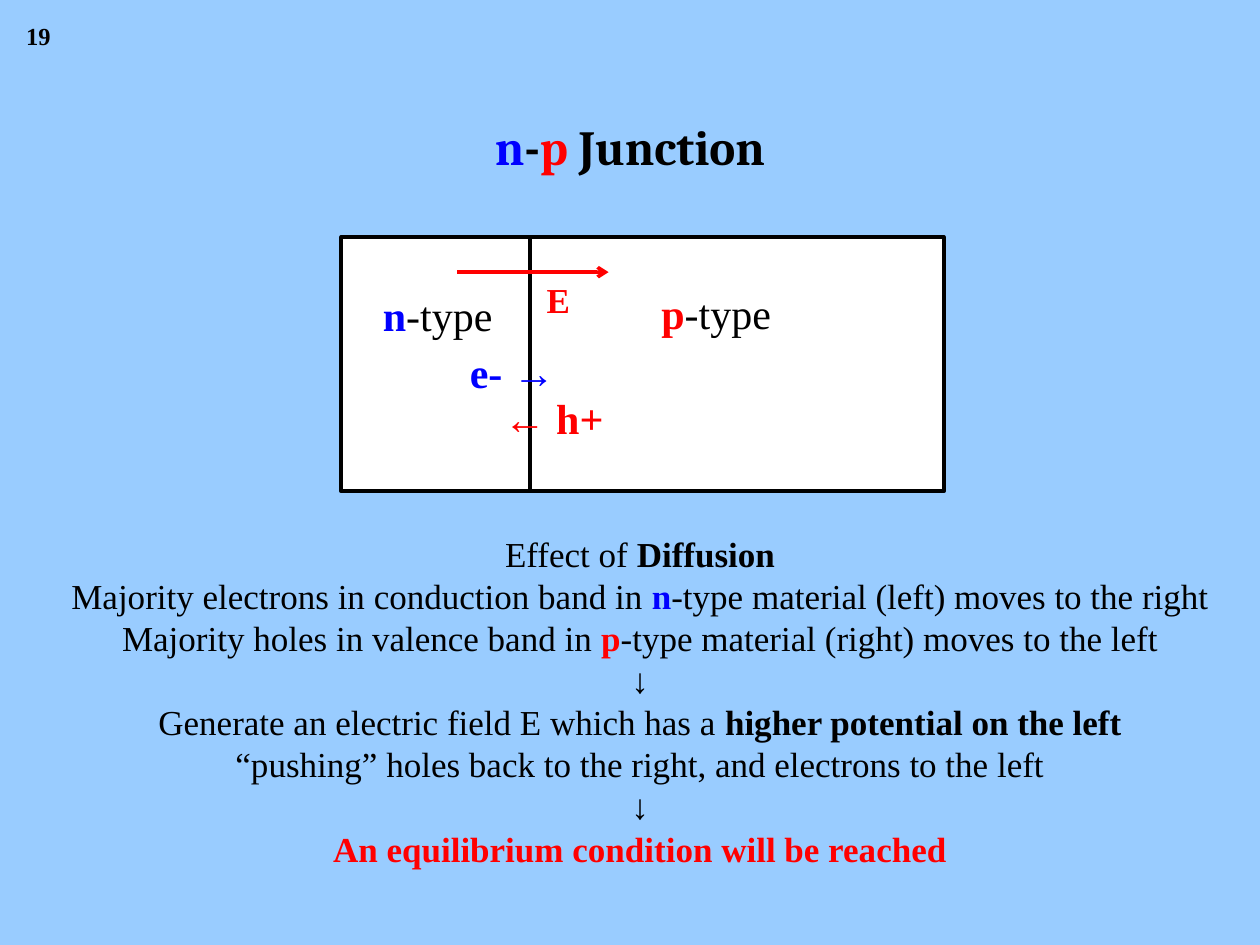
import pptx
import pptx.dml.color
import pptx.enum.shapes
import pptx.enum.text
import pptx.oxml
import pptx.oxml.ns
import pptx.util

Inches = pptx.util.Inches
Pt = pptx.util.Pt
ALIGN = pptx.enum.text.PP_ALIGN
ANCHOR = pptx.enum.text.MSO_ANCHOR

COLORS = {
    "sky": "99CCFF",
    "white": "FFFFFF",
    "black": "000000",
    "number": "020100",
    "n": "0000FF",
    "p": "FF0000",
}
SERIF = "Times New Roman"


def color(name):
    return pptx.dml.color.RGBColor.from_string(COLORS[name])


def add_text(page, box, lines, size=20, font=SERIF, align=ALIGN.LEFT,
             anchor=ANCHOR.TOP, wrap=False, spacing=None):
    """Write lines, each a list of (text, colour name, bold) spans."""
    frame = page.shapes.add_textbox(*map(Inches, box)).text_frame
    frame.word_wrap = wrap
    frame.vertical_anchor = anchor
    for index, spans in enumerate(lines):
        para = frame.add_paragraph() if index else frame.paragraphs[0]
        para.alignment = align
        if spacing:
            para.line_spacing = spacing
        for text, tint, bold in spans:
            span = para.add_run()
            span.text = text
            span.font.name = font
            span.font.size = Pt(size)
            span.font.bold = bold
            span.font.color.rgb = color(tint)


def add_region(page, box):
    region = page.shapes.add_shape(
        pptx.enum.shapes.MSO_SHAPE.RECTANGLE, *map(Inches, box))
    region.shadow.inherit = False
    region.fill.solid()
    region.fill.fore_color.rgb = color("white")
    region.line.color.rgb = color("black")
    region.line.width = Pt(2.25)


def add_field_arrow(page, left, top, length):
    arrow = page.shapes.add_connector(
        pptx.enum.shapes.MSO_CONNECTOR.STRAIGHT,
        Inches(left), Inches(top), Inches(left + length), Inches(top))
    arrow.line.color.rgb = color("p")
    arrow.line.width = Pt(2)
    head = pptx.oxml.parse_xml(
        f'<a:tailEnd {pptx.oxml.ns.nsdecls("a")} type="arrow"/>')
    arrow.line._get_or_add_ln().append(head)
    effects = pptx.oxml.parse_xml(
        f'<a:effectLst {pptx.oxml.ns.nsdecls("a")}/>')
    arrow._element.spPr.append(effects)


def add_heading(page, box):
    spans = [("n", "n", True), ("-", "black", True),
             ("p", "p", True), (" Junction", "black", True)]
    add_text(page, box, [spans], size=28, font="Cambria", align=ALIGN.CENTER,
             anchor=ANCHOR.MIDDLE, wrap=True, spacing=0.9)


def add_junction(page, box):
    """Draw the two doped regions, their carriers and the field."""
    left, top, width, height = box
    n_width = 1.5
    add_region(page, (left, top, n_width, height))
    add_region(page, (left + n_width, top, width - n_width, height))

    for kind, x, y in (("n", 0.23, 0.37), ("p", 2.44, 0.35)):
        add_text(page, (left + x, top + y, 1.08, 0.5),
                 [[(kind, kind, True), ("-type", "black", False)]], size=24)

    labels = (
        ("e- →", "n", 0.92, 0.82, 0.88, 24),
        ("← h+", "p", 1.19, 1.19, 1.0, 24),
        ("E", "p", 1.53, 0.28, 0.39, 20),
    )
    for text, tint, x, y, label_width, size in labels:
        add_text(page, (left + x, top + y, label_width, 0.5),
                 [[(text, tint, True)]], size=size)
    add_field_arrow(page, left + 0.92, top + 0.28, 1.2)


def add_explanation(page, box):
    down = [("↓", "black", False)]
    lines = [
        [("Effect of ", "black", False), ("Diffusion", "black", True)],
        [("Majority electrons in conduction band in ", "black", False),
         ("n", "n", True),
         ("-type material (left) moves to the right", "black", False)],
        [("Majority holes in valence band in ", "black", False),
         ("p", "p", True),
         ("-type material (right) moves to the left", "black", False)],
        down,
        [("Generate an electric field E which has a ", "black", False),
         ("higher potential on the left", "black", True)],
        [("“pushing” holes back to the right, and electrons to the left",
          "black", False)],
        down,
        [("An equilibrium condition will be reached", "p", True)],
    ]
    add_text(page, box, lines, align=ALIGN.CENTER, spacing=Pt(24))


def main():
    deck = pptx.Presentation()
    deck.slide_width = Inches(10)
    deck.slide_height = Inches(7.5)
    page = deck.slides.add_slide(deck.slide_layouts[6])
    page.background.fill.solid()
    page.background.fill.fore_color.rgb = color("sky")

    add_text(page, (0.11, 0.12, 0.42, 0.33), [[("19", "number", True)]], size=14)
    add_heading(page, (0.71, 0.72, 8.58, 0.93))
    add_junction(page, (2.71, 1.88, 4.78, 2.02))
    add_explanation(page, (0.44, 4.18, 9.28, 2.79))
    deck.save("out.pptx")


if __name__ == "__main__":
    main()
